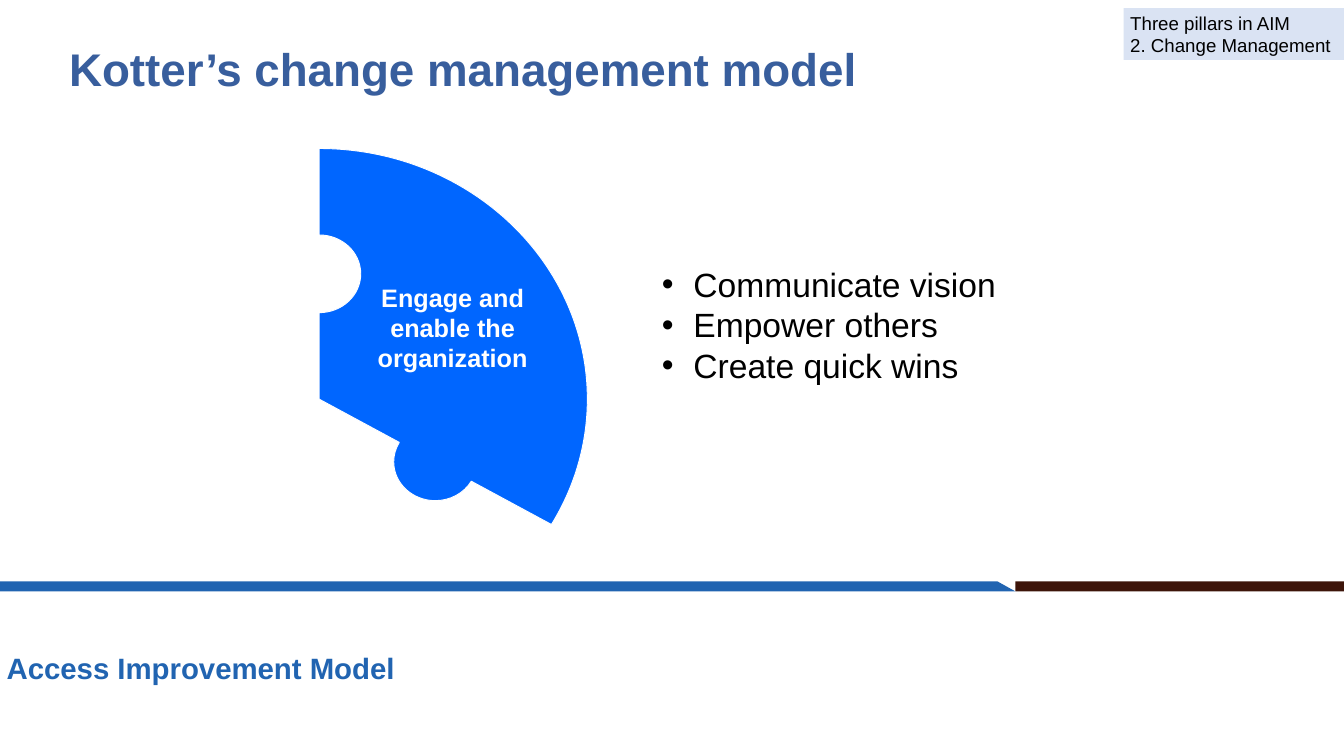
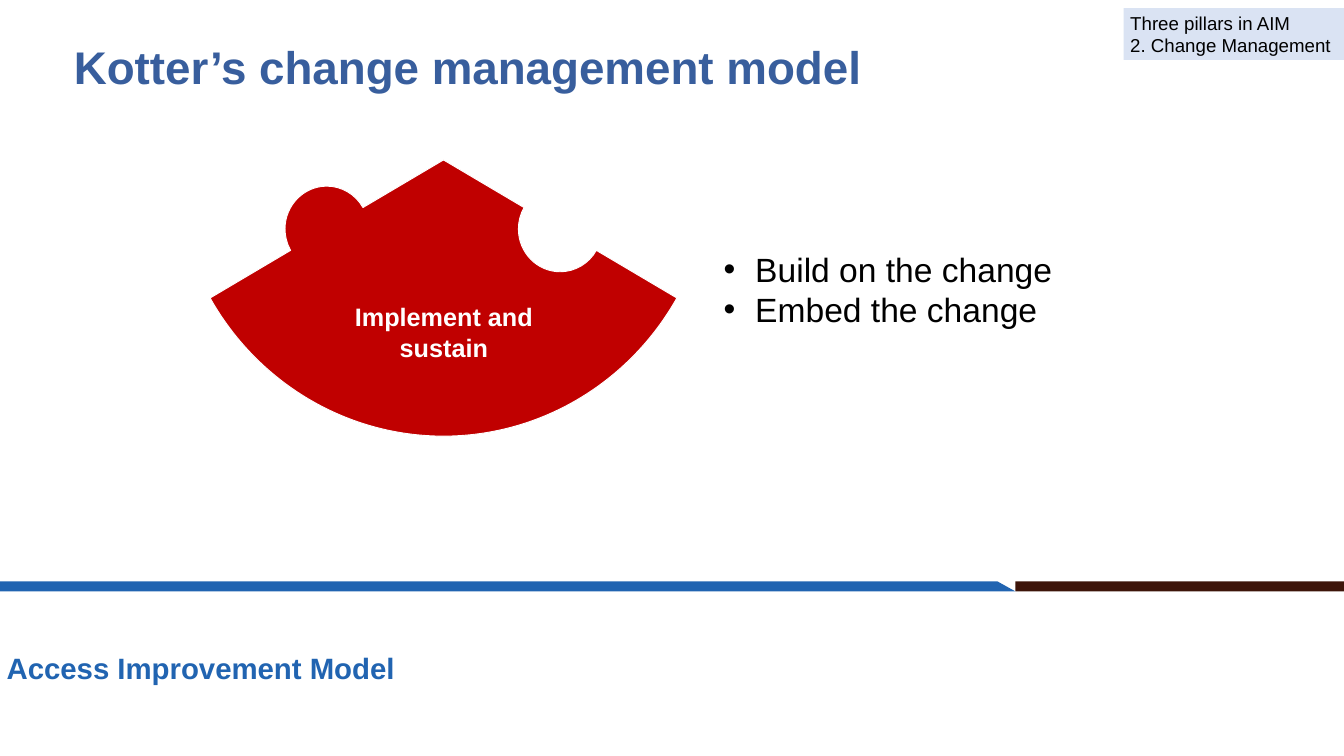
"""Build two slides on Kotter's change management model."""
import math

import pptx
import pptx.dml.color
import pptx.enum.shapes
import pptx.enum.text
import pptx.oxml.ns
import pptx.util
from lxml import etree

RGB = pptx.dml.color.RGBColor
BLACK = RGB(0x00, 0x00, 0x00)
WHITE = RGB(0xFF, 0xFF, 0xFF)
BAND_BLUE = RGB(0x21, 0x64, 0xB1)
BAND_BROWN = RGB(0x3D, 0x14, 0x09)
TITLE_BLUE = RGB(0x38, 0x5E, 0x9D)
TAG_BLUE = RGB(0xDA, 0xE3, 0xF3)
ENGAGE_BLUE = RGB(0x00, 0x66, 0xFF)
SUSTAIN_RED = RGB(0xC0, 0x00, 0x00)

FONT = "Arial"
CELL = pptx.util.Inches(1)
COLS, ROWS = 20, 11.25
BAND_LEFT, BAND_TOP, BAND_HEIGHT, BAND_SPLIT = -0.07, 8.65, 0.15, 15.11
KNOB_SHARE = 0.155
ALIGN = pptx.enum.text.PP_ALIGN
ANCHOR = pptx.enum.text.MSO_ANCHOR
qn = pptx.oxml.ns.qn


def cells(*values):
    return [round(v * CELL) for v in values]


def write(tf, text, size, color=BLACK, bold=False, align=ALIGN.LEFT,
          anchor=ANCHOR.TOP, spacing=None, bullet=False, bottom=0.05):
    tf.word_wrap = True
    tf.vertical_anchor = anchor
    tf.margin_bottom = cells(bottom)[0]
    for i, line in enumerate(text.split("\n")):
        p = tf.paragraphs[0] if i == 0 else tf.add_paragraph()
        p.alignment = align
        p.line_spacing = spacing
        if bullet:
            pPr = p._p.get_or_add_pPr()
            indent = cells(0.47)[0]
            pPr.set("marL", str(indent))
            pPr.set("indent", str(-indent))
            etree.SubElement(pPr, qn("a:buFont")).set("typeface", FONT)
            etree.SubElement(pPr, qn("a:buChar")).set("char", "•")
        r = p.add_run()
        r.text = line
        r.font.name = FONT
        r.font.size = pptx.util.Pt(size)
        r.font.bold = bold
        r.font.color.rgb = color


def on_ellipse(center, radii, angle):
    a = math.radians(angle)
    return (center[0] + radii[0] * math.cos(a),
            center[1] + radii[1] * math.sin(a))


def arc(center, radii, start, end):
    """Return a line to the start, then one Bezier curve per quadrant."""
    low, high = sorted((start, end))
    turns = [a for a in range(-360, 361, 90) if low < a < high]
    stops = sorted([start, *turns, end], reverse=start > end)
    segments = [[on_ellipse(center, radii, start)]]
    for a, b in zip(stops, stops[1:]):
        k = 4 / 3 * math.tan(math.radians(b - a) / 4)
        reach = [radius * math.hypot(1, k) for radius in radii]
        swing = math.degrees(math.atan(k))
        segments.append([on_ellipse(center, reach, a + swing),
                         on_ellipse(center, reach, b - swing),
                         on_ellipse(center, radii, b)])
    return segments


class Deck:
    def __init__(self):
        self.prs = pptx.Presentation()
        self.prs.slide_width, self.prs.slide_height = cells(COLS, ROWS)
        self.s = None

    def paint(self, sp, fill, line=None):
        sp.shadow.inherit = False
        sp.fill.solid()
        sp.fill.fore_color.rgb = fill
        if line is None:
            sp.line.fill.background()
        else:
            sp.line.color.rgb = line
            sp.line.width = pptx.util.Pt(1)

    def text(self, box, text, size, **style):
        sp = self.s.shapes.add_textbox(*cells(*box))
        write(sp.text_frame, text, size, **style)

    def rect(self, box, fill):
        kind = pptx.enum.shapes.MSO_SHAPE.RECTANGLE
        sp = self.s.shapes.add_shape(kind, *cells(*box))
        self.paint(sp, fill)
        return sp

    def outline(self, start, segments, fill, line=None):
        builder = self.s.shapes.build_freeform(*cells(*start))
        builder.add_line_segments(
            [cells(*point) for segment in segments for point in segment])
        sp = builder.convert_to_shape()
        steps = iter(list(sp._element.iter(qn("a:lnTo"))))
        for segment in segments:
            first, *others = [next(steps) for _ in segment]
            if others:
                curve = etree.Element(qn("a:cubicBezTo"))
                first.addprevious(curve)
                for step in (first, *others):
                    curve.append(step[0])
                    step.getparent().remove(step)
        self.paint(sp, fill, line)

    def puzzle_wedge(self, hub, radii, start, end, fill):
        knob = [radius * KNOB_SHARE for radius in radii]
        middle = [radius / 2 for radius in radii]
        socket_center = on_ellipse(hub, middle, start)
        knob_center = on_ellipse(hub, middle, end)
        segments = [*arc(socket_center, knob, start + 180, start),
                    *arc(hub, radii, start, end),
                    *arc(knob_center, knob, end, end + 180)]
        self.outline(hub, segments, fill, WHITE)

    def new_slide(self, title_at):
        self.s = self.prs.slides.add_slide(self.prs.slide_layouts[6])
        self.rect((BAND_SPLIT, BAND_TOP, COLS - BAND_SPLIT, BAND_HEIGHT),
                  BAND_BROWN)
        self.text((0, 9.62, 8.36, 0.63), "Access Improvement Model", 31.5,
                  color=BAND_BLUE, bold=True)
        bottom = BAND_TOP + BAND_HEIGHT
        corners = [(BAND_SPLIT, bottom), (BAND_SPLIT - 0.27, BAND_TOP),
                   (BAND_LEFT, BAND_TOP)]
        self.outline((BAND_LEFT, bottom), [[c] for c in corners], BAND_BLUE)
        self.text((*title_at, 15.72, 0.9), "Kotter’s change management model",
                  49, color=TITLE_BLUE, bold=True, anchor=ANCHOR.MIDDLE,
                  spacing=0.9, bottom=0.11)

    def tag(self, text):
        sp = self.rect((16.72, 0.12, 3.28, 0.77), TAG_BLUE)
        write(sp.text_frame, text, 20, anchor=ANCHOR.MIDDLE)

    def label(self, box, text):
        self.text(box, text, 27, color=WHITE, bold=True, align=ALIGN.CENTER)

    def bullets(self, at, text):
        self.text((*at, 5.42, 1.97), text, 36, bullet=True)

    def topic(self, title_at, bullets_at, bullets, wedge, label_box, label):
        self.new_slide(title_at)
        self.bullets(bullets_at, bullets)
        self.puzzle_wedge(*wedge)
        self.label(label_box, label)
        self.tag("Three pillars in AIM\n2. Change Management")


def main():
    deck = Deck()
    deck.topic((0.93, 0.65), (9.75, 3.88),
               "Communicate vision\nEmpower others\nCreate quick wins",
               ((4.75, 5.94), (3.99, 3.73), -90, 30, ENGAGE_BLUE),
               (4.99, 4.15, 3.49, 1.46), "Engage and enable the organization")
    deck.topic((1, 0.62), (10.67, 3.65),
               "Build on the change\nEmbed the change",
               ((6.6, 2.38), (4.01, 4.11), 30, 150, SUSTAIN_RED),
               (4.85, 4.44, 3.51, 1.01), "Implement and sustain")
    deck.prs.save("out.pptx")


if __name__ == "__main__":
    main()
